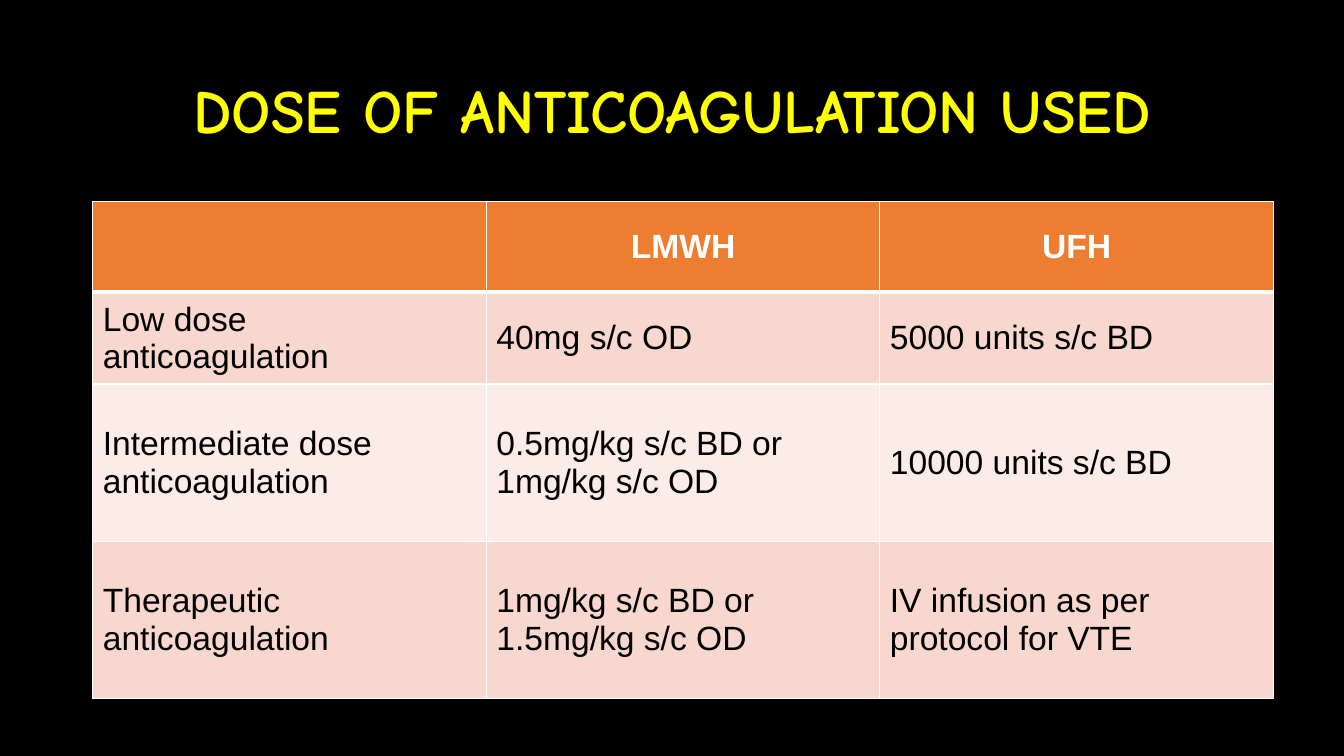
"""Build a slide with a table of anticoagulation doses."""
from lxml import etree
from pptx import Presentation
from pptx.dml.color import RGBColor
from pptx.enum import text
from pptx.oxml import ns
from pptx.util import Inches, Pt

BLACK = RGBColor(0x00, 0x00, 0x00)
WHITE = RGBColor(0xFF, 0xFF, 0xFF)
YELLOW = RGBColor(0xFF, 0xFF, 0x00)
ORANGE = RGBColor(0xED, 0x7D, 0x31)
PINK = RGBColor(0xF8, 0xD7, 0xCE)
PALE_PINK = RGBColor(0xFC, 0xEC, 0xE8)

DOSES = [
    ["", "LMWH", "UFH"],
    ["Low dose anticoagulation", "40mg s/c OD", "5000 units s/c BD"],
    ["Intermediate dose anticoagulation", "0.5mg/kg s/c BD or 1mg/kg s/c OD",
     "10000 units s/c BD"],
    ["Therapeutic anticoagulation", "1mg/kg s/c BD or 1.5mg/kg s/c OD",
     "IV infusion as per protocol for VTE"],
]
ROW_HEIGHTS = [0.9, 0.91, 1.56, 1.56]
ROW_FILLS = [ORANGE, PINK, PALE_PINK, PINK]


def write(frame, words, size=24, font="Arial", color=BLACK, bold=False,
          align=text.PP_ALIGN.LEFT, spacing=1.0):
    paragraph = frame.paragraphs[0]
    paragraph.alignment = align
    paragraph.line_spacing = spacing
    paragraph.font.size = Pt(size)
    run = paragraph.add_run()
    run.text = words
    run.font.size = Pt(size)
    run.font.name = font
    run.font.bold = bold
    run.font.color.rgb = color


def add_border(cell, side, width):
    properties = cell._tc.get_or_add_tcPr()
    line = etree.SubElement(properties, ns.qn(f"a:ln{side}"), w=str(Pt(width)))
    fill = etree.SubElement(line, ns.qn("a:solidFill"))
    etree.SubElement(fill, ns.qn("a:srgbClr"), val=str(WHITE))


presentation = Presentation()
presentation.slide_width = Inches(13.33)
presentation.slide_height = Inches(7.5)
slide = presentation.slides.add_slide(presentation.slide_layouts[5])
slide.background.fill.solid()
slide.background.fill.fore_color.rgb = BLACK

title = slide.shapes.title
title.left, title.top = Inches(0.92), Inches(0.4)
title.width, title.height = Inches(11.5), Inches(1.45)
title.text_frame.vertical_anchor = text.MSO_ANCHOR.MIDDLE
write(title.text_frame, "DOSE OF ANTICOAGULATION USED", size=44, font="Comic Neue",
      color=YELLOW, bold=True, align=text.PP_ALIGN.CENTER, spacing=0.9)

table = slide.shapes.add_table(len(DOSES), len(DOSES[0]), Inches(0.92), Inches(2),
                               Inches(11.71), Inches(sum(ROW_HEIGHTS))).table
for row_index, row in enumerate(DOSES):
    table.rows[row_index].height = Inches(ROW_HEIGHTS[row_index])
    header = row_index == 0
    for column_index, words in enumerate(row):
        cell = table.cell(row_index, column_index)
        cell.vertical_anchor = text.MSO_ANCHOR.MIDDLE
        add_border(cell, "L", 1)
        add_border(cell, "R", 1)
        add_border(cell, "T", 3 if row_index == 1 else 1)
        add_border(cell, "B", 3 if header else 1)
        cell.fill.solid()
        cell.fill.fore_color.rgb = ROW_FILLS[row_index]
        if words:
            write(cell.text_frame, words, color=WHITE if header else BLACK, bold=header,
                  align=text.PP_ALIGN.CENTER if header else text.PP_ALIGN.LEFT)

presentation.save("out.pptx")
